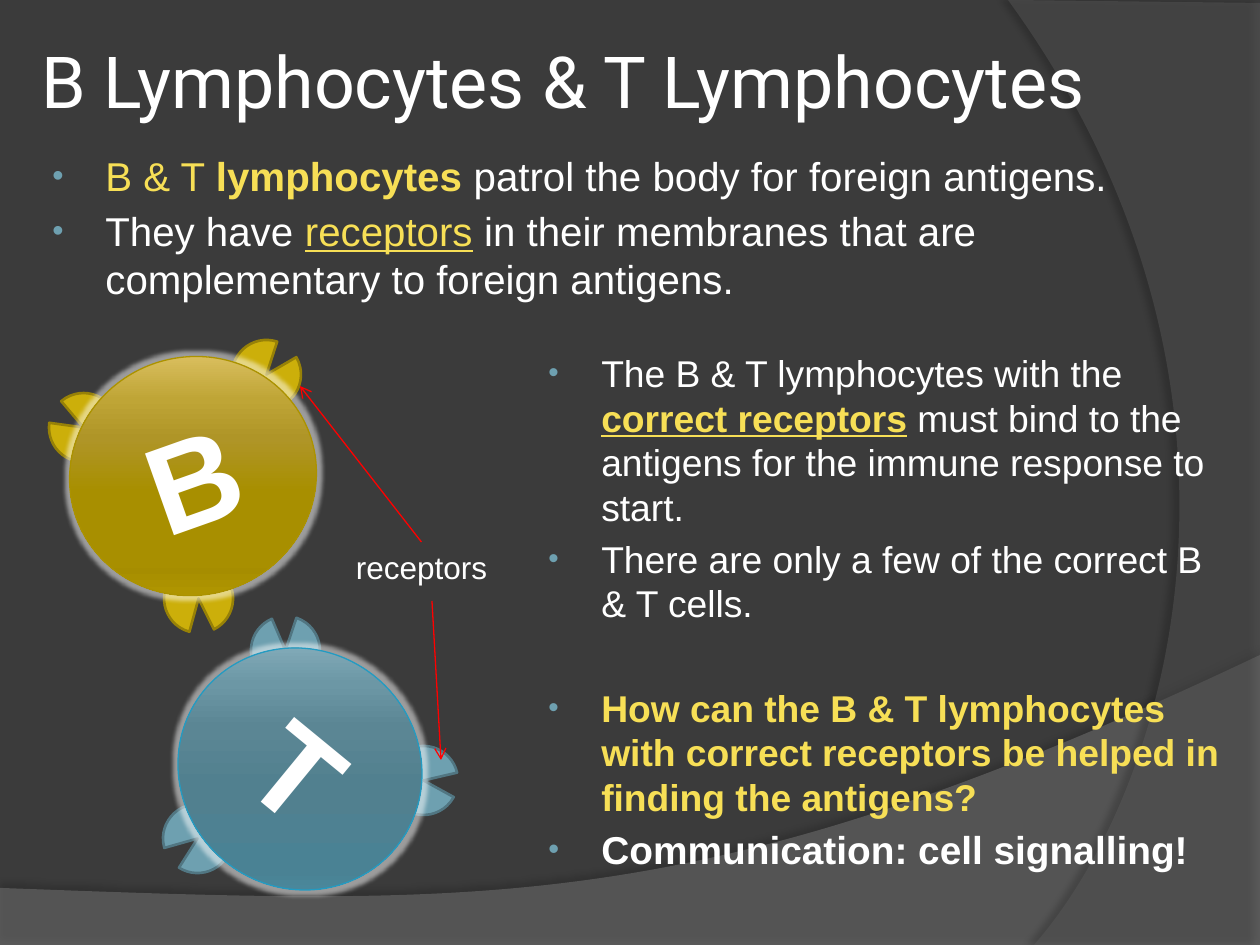
from dataclasses import dataclass

from lxml.etree import Element, SubElement
from pptx import Presentation
from pptx.dml.color import RGBColor
from pptx.enum.shapes import MSO_CONNECTOR, MSO_SHAPE
from pptx.enum.text import MSO_ANCHOR, MSO_AUTO_SIZE, PP_ALIGN
from pptx.oxml.ns import qn
from pptx.util import Inches, Pt

PX = Inches(1) / 126


@dataclass(frozen=True)
class Theme:
    background: str = "3B3B3B"
    white: str = "FFFFFF"
    gold: str = "F7DF56"
    bullet: str = "6EA0B0"
    arrow: str = "FF0000"
    shadow: str = "000000"
    title_font: str = "Roboto"
    body_font: str = "Arial"
    title_size: float = 41
    intro_size: float = 23
    detail_size: float = 21.3
    answer_size: float = 22.2
    label_size: float = 18
    letter_size: float = 72


@dataclass(frozen=True)
class CellStyle:
    receptor: str
    receptor_line: str
    rim: str
    gradient: tuple


THEME = Theme()
GRADIENT_STOPS = (0, 25, 38, 55, 80, 88, 100)
B_STYLE = CellStyle("CCAF0A", "978107", "AB9200", (
    "EED27E", "BFA536", "AF9527", "A88F00", "A68D00", "AF9500", "E6C100"))
T_STYLE = CellStyle("6EA0B0", "517682", "239BC2", (
    "9EC4D2", "6C97A5", "5B8694", "51808F", "4A8294", "4A8BA0", "5DAAC2"))
KEY = {"color": THEME.gold}
KEY_BOLD = {"color": THEME.gold, "bold": True}


def px(*lengths):
    return [round(length * PX) for length in lengths]


def rgb(color):
    return RGBColor.from_string(color)


def add_color(parent, color, alpha=100):
    node = SubElement(parent, qn("a:srgbClr"), val=color)
    if alpha < 100:
        SubElement(node, qn("a:alpha"), val=str(alpha * 1000))


def add_effect(shape, tag, color, alpha, **attributes):
    """Replace the inherited shadow with one explicit effect."""
    shape.shadow.inherit = False
    effects = shape._element.spPr.find(qn("a:effectLst"))
    add_color(SubElement(effects, qn(tag), **attributes), color, alpha)


def add_run(paragraph, text, size, color=THEME.white, bold=False,
            underline=False, font=THEME.body_font):
    run = paragraph.add_run()
    run.text = text
    run.font.name = font
    run.font.size = Pt(size)
    run.font.color.rgb = rgb(color)
    run.font.bold = bold
    run.font.underline = underline


def add_bullet(paragraph):
    properties = paragraph._p.get_or_add_pPr()
    indent, hanging = px(58, -53)
    properties.set("marL", str(indent))
    properties.set("indent", str(hanging))
    add_color(SubElement(properties, qn("a:buClr")), THEME.bullet)
    SubElement(properties, qn("a:buSzPct"), val="80000")
    SubElement(properties, qn("a:buFont"), typeface=THEME.body_font)
    SubElement(properties, qn("a:buChar"), char="•")


def add_bullets(slide, box, items):
    """Each item is (space before, size, runs)."""
    frame = slide.shapes.add_textbox(*px(*box)).text_frame
    frame.word_wrap = True
    for index, (space, size, runs) in enumerate(items):
        paragraph = frame.add_paragraph() if index else frame.paragraphs[0]
        paragraph.space_before = Pt(space)
        add_bullet(paragraph)
        for text, style in runs:
            add_run(paragraph, text, size, **style)


def curve_last_side(shape, points, origin):
    """Turn the last straight side of an outline into a cubic curve."""
    side = list(shape._element.iter(qn("a:lnTo")))[-1]
    curve = Element(qn("a:cubicBezTo"))
    for x, y in points:
        SubElement(curve, qn("a:pt"), x=str(x - origin[0]), y=str(y - origin[1]))
    side.getparent().replace(side, curve)


def add_wave(slide, corners, curve, color, alpha, shadow_alpha, distance, angle):
    """Translucent backdrop: straight corners, then a curve from the last one."""
    outline = corners + curve[-1:]
    builder = slide.shapes.build_freeform(*corners[0], scale=PX)
    builder.add_line_segments(outline[1:], close=True)
    wave = builder.convert_to_shape()
    curve_last_side(wave, curve, [min(axis) for axis in zip(*outline)])
    wave.fill.solid()
    wave.fill.fore_color.rgb = rgb(color)
    fill_color = wave._element.spPr.find(qn("a:solidFill"))[0]
    SubElement(fill_color, qn("a:alpha"), val=str(alpha * 1000))
    wave.line.fill.background()
    add_effect(wave, "a:outerShdw", THEME.shadow, shadow_alpha,
               blurRad=str(Pt(4)), dist=str(Pt(distance)),
               dir=str(angle * 60000), rotWithShape="0")


def add_title(slide, text):
    title = slide.shapes.title
    slide.shapes._spTree.append(title._element)
    title.left, title.top, title.width, title.height = px(35, 26, 1191, 107)
    frame = title.text_frame
    frame.word_wrap = True
    frame.auto_size = MSO_AUTO_SIZE.NONE
    frame.vertical_anchor = MSO_ANCHOR.MIDDLE
    (frame.margin_left, frame.margin_top,
     frame.margin_right, frame.margin_bottom) = px(6, 6, 6, 6)
    frame.paragraphs[0].alignment = PP_ALIGN.LEFT
    add_run(frame.paragraphs[0], text, THEME.title_size, font=THEME.title_font)


def add_receptor(group, left, top, rotation, style):
    receptor = group.shapes.add_shape(MSO_SHAPE.PIE, *px(left, top, 69, 69))
    receptor.adjustments[0] = 187.125
    receptor.adjustments[1] = 162
    receptor.rotation = rotation
    receptor.fill.solid()
    receptor.fill.fore_color.rgb = rgb(style.receptor)
    receptor.line.color.rgb = rgb(style.receptor_line)
    receptor.line.width = Pt(1.5)
    receptor.shadow.inherit = False


def fill_gradient(shape, colors):
    shape.fill.solid()
    properties = shape._element.spPr
    gradient = Element(qn("a:gradFill"), rotWithShape="0")
    stops = SubElement(gradient, qn("a:gsLst"))
    for position, color in zip(GRADIENT_STOPS, colors):
        add_color(SubElement(stops, qn("a:gs"), pos=str(position * 1000)), color)
    SubElement(gradient, qn("a:lin"), ang="5400000", scaled="0")
    properties.replace(properties.find(qn("a:solidFill")), gradient)


def add_lymphocyte(slide, letter, left, top, rotation, receptors, style):
    group = slide.shapes.add_group_shape()
    for receptor in receptors:
        add_receptor(group, *receptor, style)
    body = group.shapes.add_shape(MSO_SHAPE.OVAL, *px(left, top, 248, 238))
    body.rotation = rotation
    fill_gradient(body, style.gradient)
    body.line.color.rgb = rgb(style.rim)
    body.line.width = Pt(0.75)
    add_effect(body, "a:glow", THEME.white, 50, rad=str(Pt(5)))
    body.text_frame.vertical_anchor = MSO_ANCHOR.MIDDLE
    paragraph = body.text_frame.paragraphs[0]
    paragraph.alignment = PP_ALIGN.CENTER
    add_run(paragraph, letter, THEME.letter_size, bold=True)


def add_label(slide, text, box):
    label = slide.shapes.add_textbox(*px(*box))
    label.text_frame.word_wrap = True
    label.text_frame.auto_size = MSO_AUTO_SIZE.SHAPE_TO_FIT_TEXT
    label.text_frame.paragraphs[0].alignment = PP_ALIGN.CENTER
    add_run(label.text_frame.paragraphs[0], text, THEME.label_size)
    return label


def add_arrow(slide, start, end):
    arrow = slide.shapes.add_connector(MSO_CONNECTOR.STRAIGHT, *px(*start, *end))
    arrow.line.color.rgb = rgb(THEME.arrow)
    arrow.line.width = Pt(0.75)
    SubElement(arrow.line._get_or_add_ln(), qn("a:tailEnd"), type="arrow")
    SubElement(arrow._element.spPr, qn("a:effectLst"))
    return arrow


def main():
    deck = Presentation()
    deck.slide_width, deck.slide_height = px(1260, 945)
    slide = deck.slides.add_slide(deck.slide_layouts[5])
    slide.background.fill.solid()
    slide.background.fill.fore_color.rgb = rgb(THEME.background)

    add_wave(slide, [(0, 888), (0, 946), (1260, 946), (1260, 655)],
             [(704, 919), (493, 906), (0, 888)], "7F7F7F", 45, 35, 3.5, 270)
    add_wave(slide, [(1260, 3), (1260, 945), (1034, 945)],
             [(1178, 780), (1283, 378), (1008, 0)], "5E5E5E", 40, 45, 4, 180)
    add_title(slide, "B Lymphocytes & T Lymphocytes")
    add_bullets(slide, (35, 145, 1191, 774), [
        (0, THEME.intro_size, [
            ("B & T ", KEY), ("lymphocytes ", KEY_BOLD),
            ("patrol the body for foreign antigens.", {})]),
        (4, THEME.intro_size, [
            ("They have ", {}), ("receptors", {**KEY, "underline": True}), (" ", KEY),
            ("in their membranes that are complementary to foreign antigens.", {})]),
    ])

    add_lymphocyte(slide, "B", 69, 357, 340.5,
                   [(232, 340, 18), (164, 564, 153.5), (49, 393, 277.9)], B_STYLE)
    add_lymphocyte(slide, "T", 176, 650, 39.4,
                   [(389, 746, 76.9), (163, 804, 212.4), (251, 616, 336.8)], T_STYLE)
    label = add_label(slide, "receptors", (332, 542, 179, 50))
    add_arrow(slide, (422, 542), (300, 386)).begin_connect(label, 0)
    add_arrow(slide, (432, 601), (441, 760))

    add_bullets(slide, (531, 344, 704, 576), [
        (0, THEME.detail_size, [
            ("The B & T lymphocytes with the ", {}),
            ("correct receptors", {**KEY_BOLD, "underline": True}),
            (" must bind to the antigens for the immune response to start.", {})]),
        (4, THEME.detail_size, [
            ("There are only a few of the correct B & T cells.", {})]),
        (34, THEME.detail_size, [
            ("How can the B & T lymphocytes with correct receptors be helped"
             " in finding the antigens?", KEY_BOLD)]),
        (4, THEME.answer_size, [
            ("Communication: cell signalling!", {"bold": True})]),
    ])
    deck.save("out.pptx")


if __name__ == "__main__":
    main()
